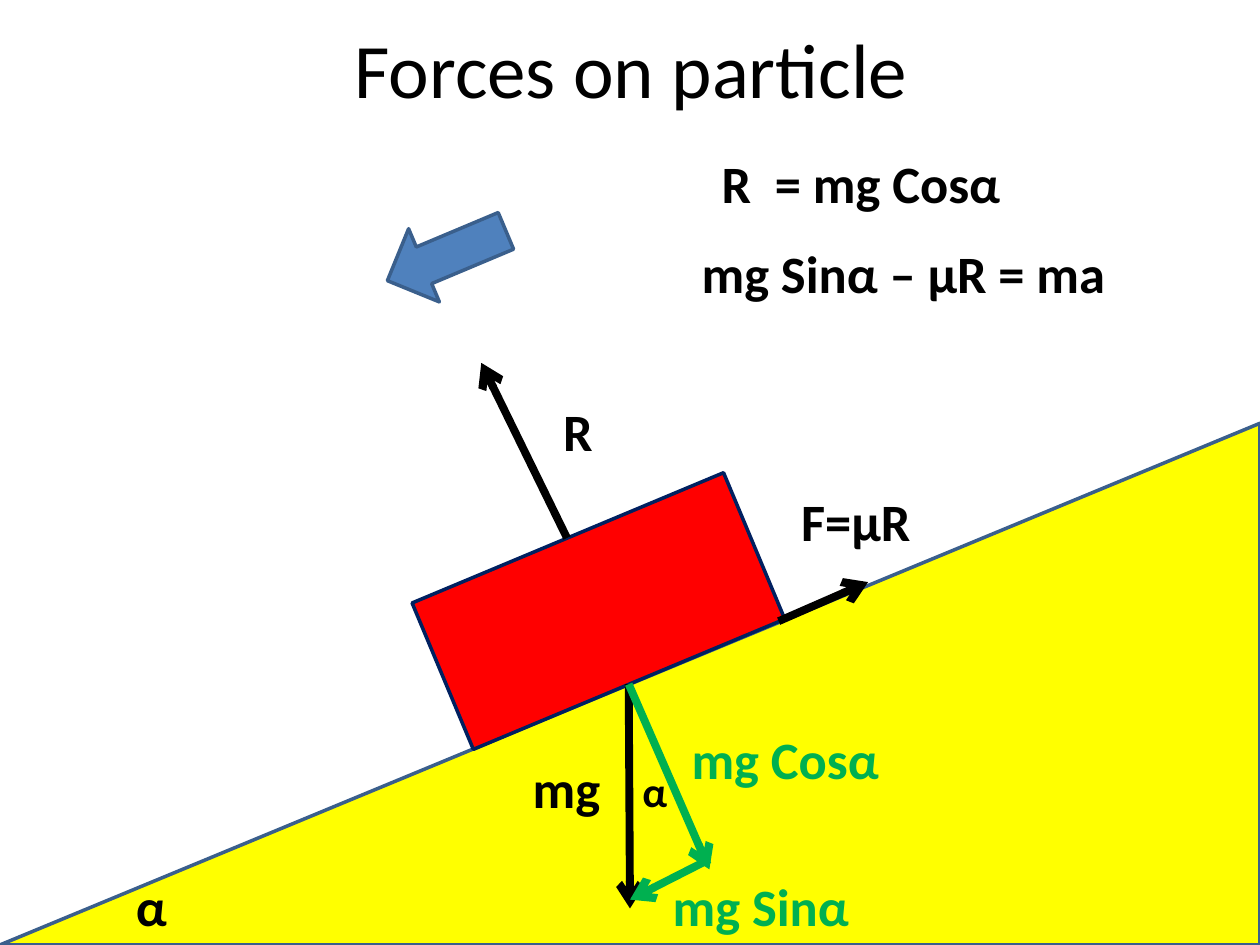
from lxml.etree import SubElement
from pptx import Presentation
from pptx.dml.color import RGBColor
from pptx.enum.shapes import MSO_CONNECTOR, MSO_SHAPE
from pptx.enum.text import MSO_ANCHOR, PP_ALIGN
from pptx.oxml.ns import qn
from pptx.util import Inches, Pt

BLACK = RGBColor(0x00, 0x00, 0x00)
GREEN = RGBColor(0x00, 0xB0, 0x50)
YELLOW = RGBColor(0xFF, 0xFF, 0x00)
RED = RGBColor(0xFF, 0x00, 0x00)
BLUE = RGBColor(0x4F, 0x81, 0xBD)
EDGE_BLUE = RGBColor(0x3A, 0x5F, 0x8C)
NAVY = RGBColor(0x00, 0x20, 0x60)
TOP, BOTTOM = 0, 2
COLUMNS, ROWS = 100, 75


class ForceDiagram:
    """Draws styled elements on one slide, measured in grid columns and rows."""

    font_name = "Calibri"
    edge_width = Pt(2)
    force_width = Pt(4.5)

    def __init__(self, presentation):
        self.slide = presentation.slides.add_slide(presentation.slide_layouts[6])
        self.column = presentation.slide_width / COLUMNS
        self.row = presentation.slide_height / ROWS

    def point(self, column, row):
        return round(column * self.column), round(row * self.row)

    def frame(self, left, top, width, height):
        return *self.point(left, top), *self.point(width, height)

    def solid(self, kind, place, fill, edge, rotation=0, mirrored=False):
        shape = self.slide.shapes.add_shape(kind, *self.frame(*place))
        shape.shadow.inherit = False
        shape.fill.solid()
        shape.fill.fore_color.rgb = fill
        shape.line.color.rgb = edge
        shape.line.width = self.edge_width
        shape.rotation = rotation
        if mirrored:
            shape.element.spPr.find(qn("a:xfrm")).set("flipH", "1")
        return shape

    def force(self, start, end, color=BLACK, body=None, side=None):
        begin, finish = self.point(*start), self.point(*end)
        connector = self.slide.shapes.add_connector(
            MSO_CONNECTOR.STRAIGHT, *begin, *finish)
        if body is not None:
            connector.begin_connect(body, side)
            connector.begin_x, connector.begin_y = begin
            connector.end_x, connector.end_y = finish
        connector.line.color.rgb = color
        connector.line.width = self.force_width
        SubElement(connector.line._get_or_add_ln(), qn("a:tailEnd"), type="arrow")
        SubElement(connector._element.spPr, qn("a:effectLst"))

    def label(self, text, place, color=BLACK, size=30, bold=True,
              align=PP_ALIGN.LEFT, anchor=MSO_ANCHOR.TOP):
        text_frame = self.slide.shapes.add_textbox(*self.frame(*place)).text_frame
        text_frame.word_wrap = True
        text_frame.vertical_anchor = anchor
        paragraph = text_frame.paragraphs[0]
        paragraph.text = text
        paragraph.alignment = align
        paragraph.font.name = self.font_name
        paragraph.font.size = Pt(size)
        paragraph.font.bold = bold
        paragraph.font.color.rgb = color


def main():
    presentation = Presentation()
    presentation.slide_width = Inches(10)
    presentation.slide_height = Inches(7.5)
    diagram = ForceDiagram(presentation)

    diagram.label("Forces on particle", (5.1, 0, 90, 10.7), size=44, bold=False,
                  align=PP_ALIGN.CENTER, anchor=MSO_ANCHOR.MIDDLE)
    diagram.solid(MSO_SHAPE.RIGHT_TRIANGLE, (0, 33.6, 100, 41.4),
                  YELLOW, EDGE_BLUE, mirrored=True)
    particle = diagram.solid(MSO_SHAPE.RECTANGLE, (34.1, 42.2, 26.8, 12.6),
                             RED, NAVY, rotation=337.3)
    diagram.solid(MSO_SHAPE.DOWN_ARROW, (32.3, 15.2, 6.3, 10.2),
                  BLUE, EDGE_BLUE, rotation=67.2)

    contact = (49.9, 54.3)
    diagram.force(contact, (50, 72.1), body=particle, side=BOTTOM)
    diagram.force((45, 42.7), (38.2, 28.8), body=particle, side=TOP)
    diagram.force((61.8, 49.3), (68.9, 46.2))
    diagram.force(contact, (56.3, 69), GREEN, particle, BOTTOM)
    diagram.force((56.3, 68.2), (50, 71.4), GREEN)

    for text, place, color in (
        ("mg", (41.3, 59.5, 12.6, 6.1), BLACK),
        ("R", (43.7, 31.2, 7.1, 6.1), BLACK),
        ("F=μR", (62.6, 38.3, 11.8, 6.1), BLACK),
        ("α", (9.8, 68.9, 7.1, 6.1), BLACK),
        ("mg Cosα", (53.9, 57.2, 21.3, 6.1), GREEN),
        ("mg Sinα", (52.4, 68.9, 21.3, 6.1), GREEN),
        ("R  = mg Cosα", (56.3, 11.5, 34.6, 6.1), BLACK),
        ("mg Sinα – μR = ma", (54.7, 18.6, 34.6, 11.1), BLACK),
    ):
        diagram.label(text, place, color)
    diagram.label("α", (50, 60.3, 7.1, 5), size=24)

    presentation.save("out.pptx")


if __name__ == "__main__":
    main()
